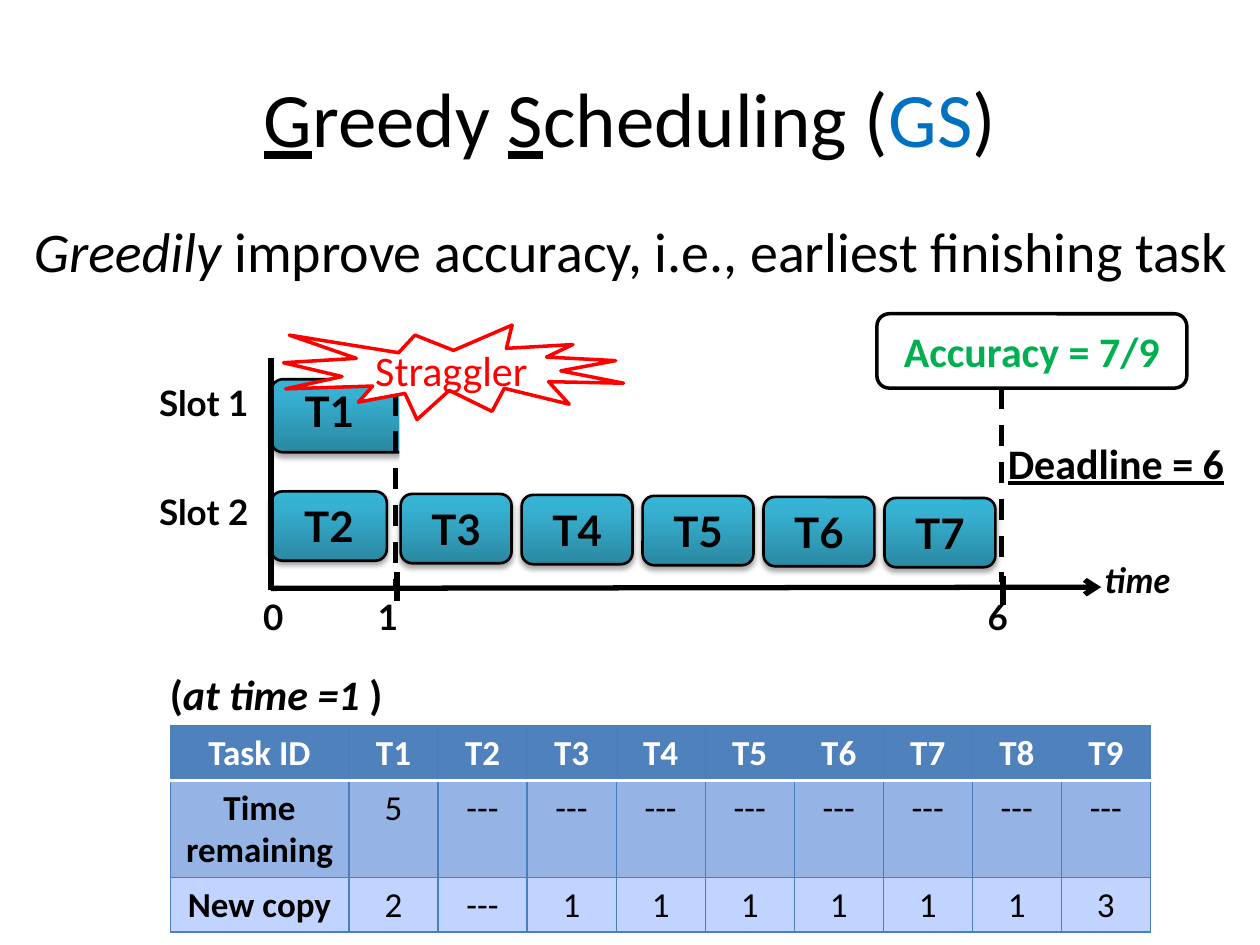
from copy import deepcopy
from dataclasses import dataclass

from pptx import Presentation
from pptx.dml.color import RGBColor as RGB
from pptx.enum.dml import MSO_LINE_DASH_STYLE as Dash
from pptx.enum.shapes import MSO_CONNECTOR as Connector, MSO_SHAPE as Shape
from pptx.enum.text import MSO_ANCHOR as Anchor, PP_ALIGN as Align
from pptx.oxml import parse_xml
from pptx.oxml.ns import nsdecls, qn
from pptx.oxml.xmlchemy import OxmlElement
from pptx.util import Inches, Pt


@dataclass(frozen=True)
class Theme:
    body_font: str = "Calibri"
    chart_font: str = "Lato"
    title: int = 44
    lead: int = 32
    label: int = 24
    small: int = 20
    black: str = "000000"
    white: str = "FFFFFF"
    blue: str = "0070C0"
    green: str = "00B050"
    red: str = "FF0000"
    task_stops: tuple = ((0, "2A88A2"), (0.8, "37B1D2"), (1, "34B4D6"))
    table_rows: tuple = ("4F81BD", "95B3E4", "C0D4FF")
    table_line: str = "4B7EBC"


T = Theme()


def grid(*cells):
    """Columns and rows of a 100 x 75 grid, as lengths."""
    return [Inches(c / 10) for c in cells]


def write(tf, runs, size, font=T.body_font, color=T.black, align=Align.LEFT, bold=False):
    """Runs are (text, overrides) pairs; a plain string is a single run."""
    p = tf.paragraphs[0]
    p.alignment = align
    for text, style in [(runs, {})] if isinstance(runs, str) else runs:
        r = p.add_run()
        r.text = text
        r.font.name, r.font.size, r.font.bold = font, Pt(size), bold
        r.font.italic = style.get("italic", False)
        r.font.underline = style.get("underline", False)
        r.font.color.rgb = RGB.from_string(style.get("color", color))


def text_box(s, at, runs, size, anchor=Anchor.TOP, **style):
    tf = s.shapes.add_textbox(*grid(*at)).text_frame
    tf.word_wrap = True
    tf.vertical_anchor = anchor
    write(tf, runs, size, **style)


def axis_text(s, at, runs, size=T.small, **style):
    text_box(s, at, runs, size, font=T.chart_font, bold=True, **style)


def box(s, kind, at, text="", line=None, width=2, **style):
    sp = s.shapes.add_shape(kind, *grid(*at))
    sp.shadow.inherit = False
    sp.fill.solid()
    sp.fill.fore_color.rgb = RGB.from_string(T.white)
    if line:
        sp.line.color.rgb = RGB.from_string(line)
        sp.line.width = Pt(width)
    else:
        sp.line.fill.background()
    if text:
        sp.text_frame.vertical_anchor = Anchor.MIDDLE
        write(sp.text_frame, text, T.label, align=Align.CENTER, **style)
    return sp


def task(s, at, text=""):
    sp = box(s, Shape.ROUNDED_RECTANGLE, at, text, T.black, 1.5,
             font=T.chart_font, bold=True)
    sp.fill.gradient()
    sp.fill.gradient_angle = 90
    stops = sp._element.spPr.find(qn("a:gradFill")).find(qn("a:gsLst"))
    stops.insert(1, deepcopy(stops[0]))
    for stop, (position, color) in zip(sp.fill.gradient_stops, T.task_stops):
        stop.position = position
        stop.color.rgb = RGB.from_string(color)
    sp._element.spPr.find(qn("a:effectLst")).append(parse_xml(
        f'<a:outerShdw {nsdecls("a")} blurRad="{Pt(3.1)}" dist="{Pt(1.8)}" dir="5400000" '
        'rotWithShape="0"><a:srgbClr val="000000"><a:alpha val="35000"/></a:srgbClr>'
        '</a:outerShdw>'))


def line(s, start, end, dashed=False, arrow=False):
    c = s.shapes.add_connector(Connector.STRAIGHT, *grid(*start, *end))
    c.line.color.rgb = RGB.from_string(T.black)
    c.line.width = Pt(3)
    if dashed:
        c.line.dash_style = Dash.DASH
    if arrow:
        tail = OxmlElement("a:tailEnd")
        tail.set("type", "arrow")
        c.line._get_or_add_ln().append(tail)
    c._element.spPr.append(OxmlElement("a:effectLst"))


def cell_borders(cell, **sides):
    for side, (color, width) in sides.items():
        cell._tc.get_or_add_tcPr().append(parse_xml(
            f'<a:ln{side} {nsdecls("a")} w="{Pt(width)}"><a:solidFill>'
            f'<a:srgbClr val="{color}"/></a:solidFill></a:ln{side}>'))


def task_table(s, at, rows, col_widths, row_heights):
    table = s.shapes.add_table(len(rows), len(rows[0]), *grid(*at)).table
    for col, w in zip(table.columns, grid(*col_widths)):
        col.width = w
    for row, h in zip(table.rows, grid(*row_heights)):
        row.height = h
    thin, thick = (T.table_line, 0.75), (T.white, 2)
    for i, values in enumerate(rows):
        for j, value in enumerate(values):
            cell = table.cell(i, j)
            cell_borders(cell, L=thin, R=thin, T=thick if i == 1 else thin,
                         B=thick if i == 0 else thin)
            cell.fill.solid()
            cell.fill.fore_color.rgb = RGB.from_string(T.table_rows[i])
            write(cell.text_frame, value, T.small, align=Align.CENTER,
                  color=T.black if i else T.white, bold=i == 0 or j == 0)


def main():
    prs = Presentation()
    prs.slide_width, prs.slide_height = grid(100, 75)
    s = prs.slides.add_slide(prs.slide_layouts[6])

    # Title and lead sentence
    underlined = {"underline": True}
    text_box(s, (5, 3, 90, 12.5),
             [("G", underlined), ("reedy ", {}), ("S", underlined), ("cheduling (", {}),
              ("GS", {"color": T.blue}), (")", {})],
             T.title, anchor=Anchor.MIDDLE, align=Align.CENTER)
    text_box(s, (1.7, 16.7, 98.3, 10.8),
             [("Greedily ", {"italic": True}),
              ("improve accuracy, i.e., earliest finishing task", {})], T.lead)

    # Tasks in the two slots
    task(s, (21.5, 30.1, 57.5, 5.8))
    task(s, (21.5, 39, 9.2, 5.5), "T2")
    for i in range(5):
        task(s, (31.8 + 9.6 * i, 39.2 + 0.08 * i, 8.8, 5.5), f"T{i + 3}")

    # Axes, ticks and their labels
    line(s, (21.5, 46.7), (87.4, 46.6), arrow=True)
    line(s, (21.5, 28.4), (21.5, 46.8))
    line(s, (31.5, 45.4), (31.5, 47.7))
    line(s, (79.6, 45.7), (79.6, 48))
    axis_text(s, (86.7, 43.8, 11.7, 4.4), [("time", {"italic": True})])
    for i in range(2):
        axis_text(s, (4.9, 29.8 + 8.6 * i, 15.8, 4.4), f"Slot {i + 1}", align=Align.RIGHT)
    for x, tick in ((19.9, "0"), (29, "1"), (77.4, "6")):
        axis_text(s, (x, 46.8, 3.3, 4.4), tick)

    # First task ends where the straggler is cut off
    line(s, (31.4, 28.4), (31.4, 46.8), dashed=True)
    axis_text(s, (23.2, 30.1, 19.8, 5), "T1", T.label)
    box(s, Shape.RECTANGLE, (31.7, 29.8, 48.4, 7.8))

    # Deadline and callouts
    text_box(s, (79, 34.2, 21, 5), [("Deadline = 6", underlined)], T.label, bold=True)
    line(s, (79.5, 27.9), (79.5, 46.2), dashed=True)
    box(s, Shape.ROUNDED_RECTANGLE, (69.6, 24.9, 24.6, 5.9), "Accuracy = 7/9",
        T.black, color=T.green, bold=True)
    box(s, Shape.EXPLOSION1, (22.5, 25.8, 27, 7.5), "Straggler", T.red, color=T.red)

    # Task table
    text_box(s, (12.5, 52.6, 20, 5),
             [("(", {}), ("at time =1 ", {"italic": True}), (")", {})], T.label, bold=True)
    rows = [["Task ID"] + [f"T{i}" for i in range(1, 10)],
            ["Time remaining", "5"] + ["---"] * 8,
            ["New copy", "2", "---"] + ["1"] * 6 + ["3"]]
    task_table(s, (13.5, 57.6, 77.8, 16.3), rows, [14.2] + [7.07] * 9, [4.3, 7.7, 4.3])

    prs.save("out.pptx")


if __name__ == "__main__":
    main()
